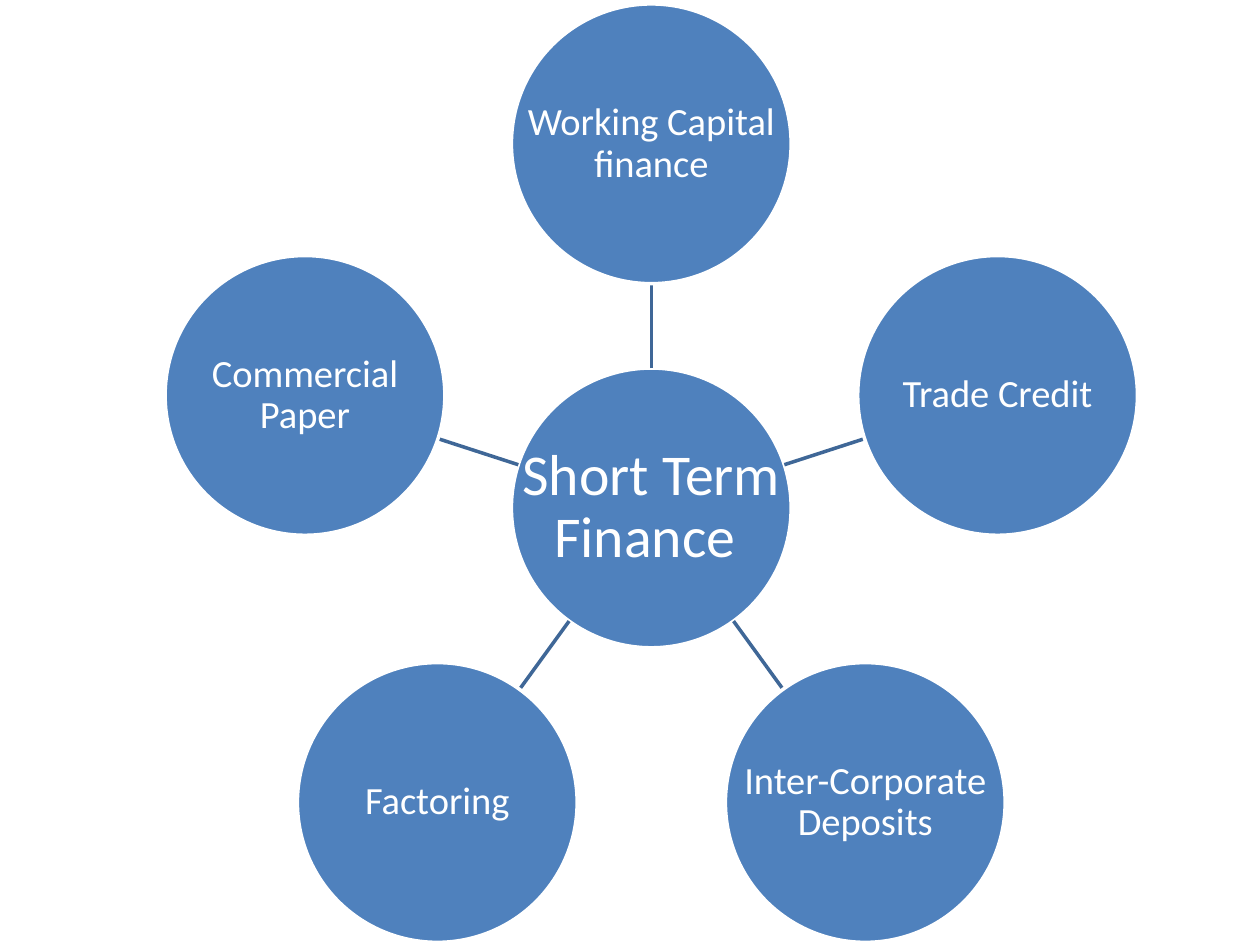
import math

import lxml.etree
import pptx
import pptx.dml.color
import pptx.enum.shapes
import pptx.enum.text
import pptx.oxml.ns
import pptx.util

Cm = pptx.util.Cm
Pt = pptx.util.Pt
RGB = pptx.dml.color.RGBColor

HUB = "Short Term Finance "
SOURCES = [
    "Working Capital finance",
    "Trade Credit",
    "Inter-Corporate Deposits",
    "Factoring",
    "Commercial Paper",
]

THEME = {
    "font": "Calibri",
    "circle": RGB(0x4F, 0x81, 0xBD),
    "spoke": RGB(0x3F, 0x67, 0x97),
    "light": RGB(0xFF, 0xFF, 0xFF),
    "hub_size": Pt(33),
    "source_size": Pt(22),
    "line": Pt(2),
}

CENTER = (13.13, 10.24)
DIAMETER = 5.64
ORBIT = 7.34
INSET = Cm(0.05)


def point_at(angle, distance):
    return (CENTER[0] + distance * math.sin(angle),
            CENTER[1] - distance * math.cos(angle))


def add_circle(slide, middle, wording, size):
    box = [Cm(value) for value in (middle[0] - DIAMETER / 2,
                                   middle[1] - DIAMETER / 2,
                                   DIAMETER, DIAMETER)]
    circle = slide.shapes.add_shape(pptx.enum.shapes.MSO_SHAPE.OVAL, *box)
    circle.shadow.inherit = False
    circle.fill.solid()
    circle.fill.fore_color.rgb = THEME["circle"]
    circle.line.color.rgb = THEME["light"]
    circle.line.width = THEME["line"]

    frame = slide.shapes.add_textbox(*box).text_frame
    frame.word_wrap = True
    frame.vertical_anchor = pptx.enum.text.MSO_ANCHOR.MIDDLE
    frame.margin_left = frame.margin_right = INSET
    frame.margin_top = frame.margin_bottom = INSET
    label = frame.paragraphs[0]
    label.text = wording
    label.alignment = pptx.enum.text.PP_ALIGN.CENTER
    label.line_spacing = 0.9
    label.font.name = THEME["font"]
    label.font.size = size
    label.font.color.rgb = THEME["light"]


def add_spoke(slide, angle):
    start = point_at(angle, DIAMETER / 2)
    end = point_at(angle, ORBIT - DIAMETER / 2)
    spoke = slide.shapes.add_connector(
        pptx.enum.shapes.MSO_CONNECTOR.STRAIGHT,
        *[Cm(value) for value in start + end])
    spoke.line.color.rgb = THEME["spoke"]
    spoke.line.width = THEME["line"]
    lxml.etree.SubElement(spoke._element.spPr,
                          pptx.oxml.ns.qn("a:effectLst"))


def main():
    deck = pptx.Presentation()
    deck.slide_width, deck.slide_height = Cm(25.4), Cm(19.05)
    slide = deck.slides.add_slide(deck.slide_layouts.get_by_name("Blank"))

    add_circle(slide, CENTER, HUB, THEME["hub_size"])
    for index, source in enumerate(SOURCES):
        angle = math.tau * index / len(SOURCES)
        add_spoke(slide, angle)
        add_circle(slide, point_at(angle, ORBIT), source, THEME["source_size"])

    deck.save("out.pptx")


if __name__ == "__main__":
    main()
